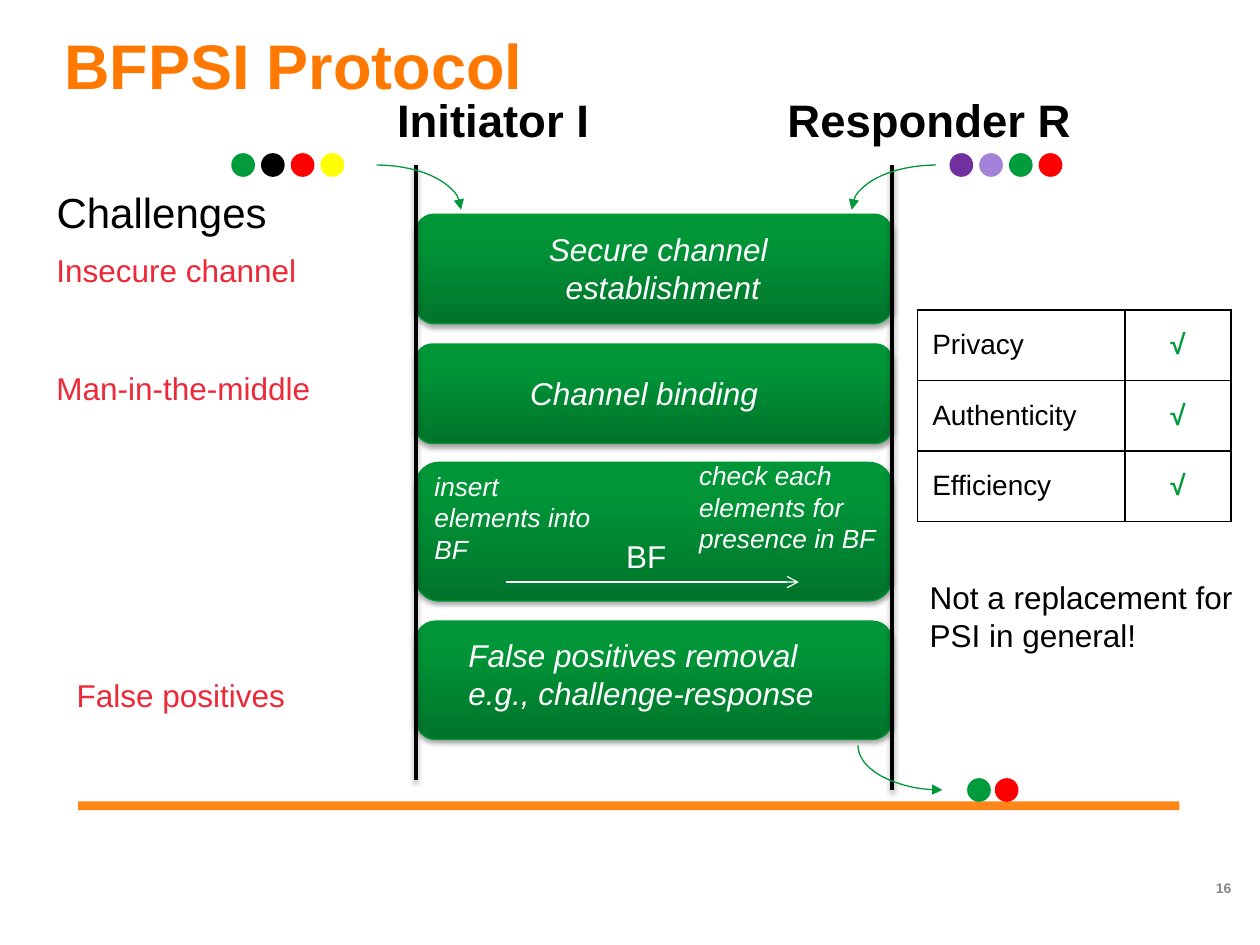
from lxml.etree import SubElement
from pptx import Presentation
from pptx.dml.color import RGBColor
from pptx.enum.shapes import MSO_CONNECTOR, MSO_SHAPE
from pptx.enum.text import MSO_ANCHOR, PP_ALIGN
from pptx.oxml.ns import qn
from pptx.util import Inches, Pt

COLORS = {
    "orange": "FF7900", "black": "000000", "white": "FFFFFF", "gray": "898989",
    "challenge": "ED2939", "green": "009B3A", "outline": "009839",
    "step_dark": "00742B", "step_light": "009638", "red": "FF0000",
    "yellow": "FFFF00", "purple": "7030A0", "lilac": "A283D9",
}


def rgb(name):
    return RGBColor.from_string(COLORS[name])


def inches(*lengths):
    return [Inches(length) for length in lengths]


def write(frame, lines, size, color="black", bold=False, italic=False,
          align=PP_ALIGN.LEFT):
    for index, line in enumerate(lines):
        paragraph = frame.paragraphs[0] if index == 0 else frame.add_paragraph()
        paragraph.alignment = align
        run = paragraph.add_run()
        run.text = line
        run.font.name = "Arial"
        run.font.size = Pt(size)
        run.font.bold = bold
        run.font.italic = italic
        run.font.color.rgb = rgb(color)


def add_text(slide, box, lines, size, inset=True, anchor=MSO_ANCHOR.TOP, **style):
    frame = slide.shapes.add_textbox(*inches(*box)).text_frame
    frame.word_wrap = True
    frame.vertical_anchor = anchor
    if not inset:
        frame.margin_left = frame.margin_right = 0
        frame.margin_top = frame.margin_bottom = 0
    write(frame, lines, size, **style)


def add_filled(slide, kind, box, color):
    shape = slide.shapes.add_shape(kind, *inches(*box))
    shape.shadow.inherit = False
    shape.fill.solid()
    shape.fill.fore_color.rgb = rgb(color)
    shape.line.fill.background()
    return shape


def add_effects(shape, alpha=None):
    """Set the effect list: empty, or a soft shadow below the shape."""
    properties = shape.element.spPr
    effects = properties.find(qn("a:effectLst"))
    if effects is None:
        effects = SubElement(properties, qn("a:effectLst"))
    if alpha:
        shadow = SubElement(effects, qn("a:outerShdw"), blurRad=str(Pt(3.1)),
                            dist=str(Pt(1.7)), dir="5400000", rotWithShape="0")
        color = SubElement(shadow, qn("a:srgbClr"), val=COLORS["black"])
        SubElement(color, qn("a:alpha"), val=str(alpha * 1000))


def add_arrowhead(shape, end, kind):
    SubElement(shape.element.spPr.find(qn("a:ln")), qn(f"a:{end}"), type=kind)


def add_line(slide, start, end, color, width, shadow=None):
    line = slide.shapes.add_connector(MSO_CONNECTOR.STRAIGHT, *inches(*start, *end))
    line.line.color.rgb = rgb(color)
    line.line.width = Pt(width)
    add_effects(line, shadow)
    return line


def add_elements(slide, left, top, colors, pitch):
    """Row of dots standing for the elements of a set."""
    for index, color in enumerate(colors):
        box = (left + index * pitch, top, 0.16, 0.16)
        dot = add_filled(slide, MSO_SHAPE.OVAL, box, color)
        dot.line.color.rgb = rgb(color)
        dot.line.width = Pt(2)


def add_curve(slide, left, top, flips=(), end="tailEnd"):
    curve = slide.shapes.add_shape(MSO_SHAPE.ARC, *inches(left, top, 1.34, 0.71))
    curve.shadow.inherit = False
    curve.fill.background()
    curve.line.color.rgb = rgb("outline")
    curve.line.width = Pt(0.75)
    for flip in flips:
        curve.element.spPr.find(qn("a:xfrm")).set(flip, "1")
    add_arrowhead(curve, end, "triangle")


def add_step(slide, box):
    step = slide.shapes.add_shape(MSO_SHAPE.ROUNDED_RECTANGLE, *inches(*box))
    step.shadow.inherit = False
    step.fill.gradient()
    step.fill.gradient_angle = 90
    stops = step.fill.gradient_stops
    for stop, position, color in zip(stops, (0, 0.8), ("step_dark", "step_light")):
        stop.position = position
        stop.color.rgb = rgb(color)
    step.line.color.rgb = rgb("outline")
    step.line.width = Pt(0.75)
    add_effects(step, 35)


def add_frame(slide, left, top, width):
    """Title, footer bar and page number."""
    bar = add_filled(slide, MSO_SHAPE.RECTANGLE,
                     (left + 0.11, top + 6.15, width, 0.07), "orange")
    color = bar.element.spPr.find(qn("a:solidFill"))[0]
    SubElement(color, qn("a:alpha"), val="90000")
    add_text(slide, (left, top, width, 1.18), ["BFPSI Protocol"], 36,
             inset=False, color="orange", bold=True)
    add_text(slide, (left + 9.14, top + 6.77, 0.3, 0.14), ["16"], 8,
             inset=False, anchor=MSO_ANCHOR.MIDDLE, color="gray", bold=True)


def add_steps(slide, left, top, width):
    """The four protocol steps between the two parties."""
    for offset, height in ((0, 0.87), (1.03, 0.79), (1.97, 1.1), (3.23, 0.94)):
        add_step(slide, (left, top + offset, width, height))
    labels = [
        ((0.81, 0.08, 2.3, 0.71), ["Secure channel ", "establishment"], 18, PP_ALIGN.CENTER),
        ((0.81, 1.22, 2.19, 0.4), ["Channel binding"], 18, PP_ALIGN.LEFT),
        ((0.05, 1.98, 1.5, 0.86), ["insert elements into BF"], 15, PP_ALIGN.LEFT),
        ((2.15, 1.9, 1.83, 0.86), ["check each elements for presence in BF"], 15, PP_ALIGN.LEFT),
        ((0.32, 3.3, 3.46, 0.71), ["False positives removal", "e.g., challenge-response"],
         18, PP_ALIGN.LEFT),
    ]
    for (x, y, w, h), lines, size, align in labels:
        add_text(slide, (left + x, top + y, w, h), lines, size,
                 color="white", italic=True, align=align)
    # Bloom filter message
    add_text(slide, (left + 1.57, top + 2.51, 0.55, 0.4), ["BF"], 18, color="white")
    message_y = top + 2.92
    message = add_line(slide, (left + 0.72, message_y), (left + 3.04, message_y),
                       "white", 0.75)
    add_arrowhead(message, "tailEnd", "arrow")


def add_parties(slide, left, top, width):
    """Party names, lifelines, input sets and the resulting set."""
    right = left + width
    for x, w, name in ((left - 0.47, 2.17, "Initiator I"),
                       (right - 1.03, 2.65, "Responder R")):
        add_text(slide, (x, top, w, 0.54), [name], 26, bold=True, align=PP_ALIGN.CENTER)
    for x, length in ((left, 4.88), (right, 4.96)):
        add_line(slide, (x, top + 0.63), (x, top + 0.63 + length), "black", 2, 38)
    add_elements(slide, left - 1.45, top + 0.55,
                 ["green", "black", "red", "yellow"], 0.236)
    add_curve(slide, left - 0.98, top + 0.63)
    add_elements(slide, right + 0.47, top + 0.55,
                 ["purple", "lilac", "green", "red"], 0.236)
    add_curve(slide, right - 0.32, top + 0.63, ["flipH"])
    add_curve(slide, right - 0.27, top + 4.88, ["flipH", "flipV"], "headEnd")
    add_elements(slide, right + 0.61, top + 5.51, ["green", "red"], 0.22)


def add_challenges(slide, left, top):
    add_text(slide, (left, top, 1.95, 0.5), ["Challenges"], 24)
    for x, y, challenge in ((0, 0.51, "Insecure channel"),
                            (0, 1.45, "Man-in-the-middle"),
                            (0.16, 3.89, "False positives")):
        add_text(slide, (left + x, top + y, 2.4, 0.4), [challenge], 18, color="challenge")


def style_cell(cell):
    cell.fill.background()
    cell.vertical_anchor = MSO_ANCHOR.MIDDLE
    cell.margin_left = cell.margin_right = Inches(0.12)
    cell.margin_top = cell.margin_bottom = Inches(0.06)
    properties = cell._tc.get_or_add_tcPr()
    for index, side in enumerate(("lnL", "lnR", "lnT", "lnB")):
        border = SubElement(properties, qn(f"a:{side}"), w=str(Pt(1)))
        fill = SubElement(border, qn("a:solidFill"))
        SubElement(fill, qn("a:srgbClr"), val=COLORS["black"])
        properties.insert(index, border)


def add_goals(slide, left, top):
    """Table of goals reached, with the remark below."""
    goals = ["Privacy", "Authenticity", "Efficiency"]
    table = slide.shapes.add_table(len(goals), 2, *inches(left, top, 2.49, 1.68)).table
    table.first_row = table.horz_banding = False
    for column, width in zip(table.columns, (1.65, 0.84)):
        column.width = Inches(width)
    for row, goal in enumerate(goals):
        name, mark = table.cell(row, 0), table.cell(row, 1)
        write(name.text_frame, [goal], 16)
        write(mark.text_frame, ["√"], 16, color="green", bold=True, align=PP_ALIGN.CENTER)
        for cell in (name, mark):
            style_cell(cell)
    add_text(slide, (left, top + 2.08, 2.68, 0.71),
             ["Not a replacement for", "PSI in general!"], 18)


def main():
    presentation = Presentation()
    presentation.slide_width, presentation.slide_height = inches(10, 7.5)
    slide = presentation.slides.add_slide(presentation.slide_layouts[6])
    add_frame(slide, 0.51, 0.21, 8.74)
    add_steps(slide, 3.3, 1.7, 3.78)
    add_parties(slide, 3.3, 0.68, 3.78)
    add_challenges(slide, 0.35, 1.43)
    add_goals(slide, 7.28, 2.46)
    presentation.save("out.pptx")


if __name__ == "__main__":
    main()
